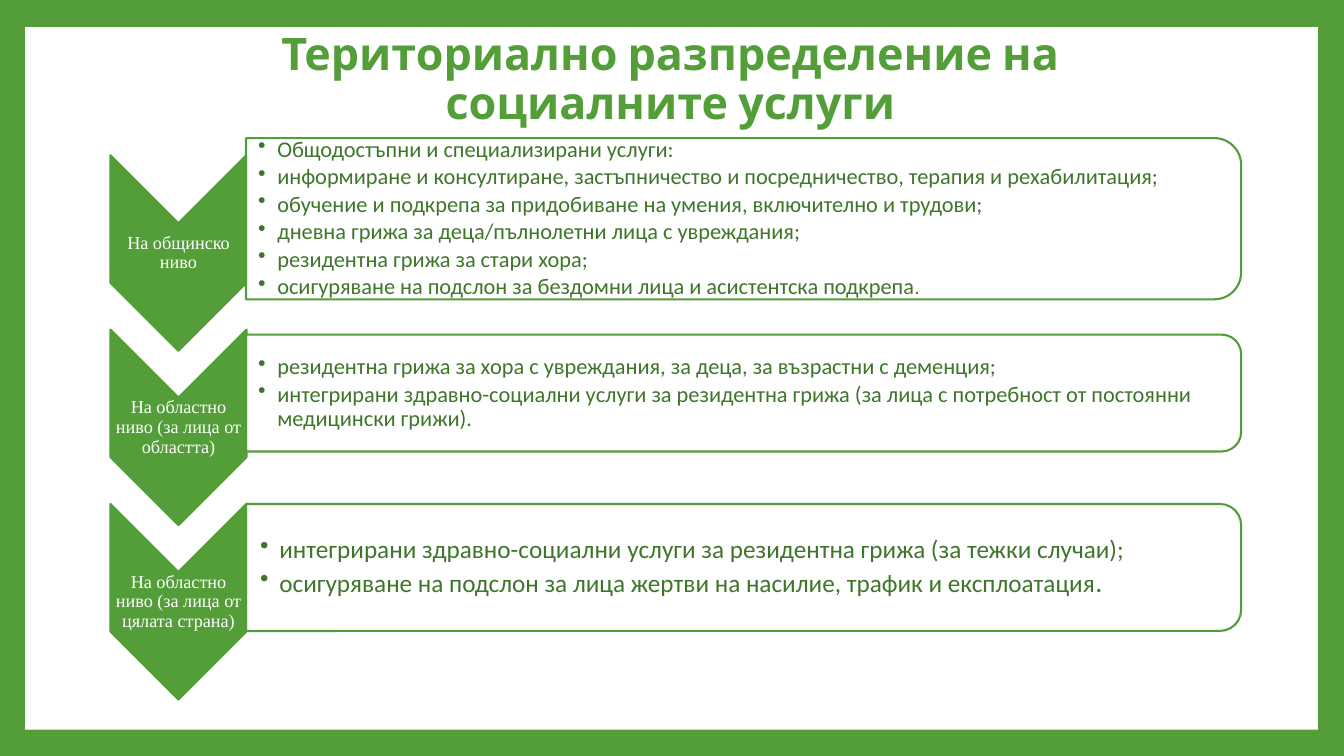
from dataclasses import dataclass

from lxml.etree import SubElement
from pptx import Presentation
from pptx.dml.color import RGBColor
from pptx.enum.shapes import MSO_SHAPE
from pptx.enum.text import MSO_ANCHOR, MSO_AUTO_SIZE, PP_ALIGN
from pptx.oxml.ns import qn
from pptx.util import Inches, Pt


@dataclass(frozen=True)
class Theme:
    green: RGBColor = RGBColor(0x54, 0x9E, 0x39)
    dark_green: RGBColor = RGBColor(0x3F, 0x76, 0x2B)
    white: RGBColor = RGBColor(0xFF, 0xFF, 0xFF)
    title_font: str = "Cabin"
    label_font: str = "Times New Roman"
    list_font: str = "Calibri"
    title_size: int = 32
    label_size: int = 13
    line_width: float = 1.5


@dataclass(frozen=True)
class Level:
    label: str
    services: tuple
    panel_height: float
    size: int
    stop_size: int  # type size of the closing full stop
    indent: float = 0.12


THEME = Theme()
FIRST_CENTER, LEVEL_STEP = 2.51, 1.73
CHEVRON_CENTER, CHEVRON_WIDTH, CHEVRON_LENGTH = 1.77, 1.35, 1.94
PANEL_LEFT, PANEL_WIDTH, PANEL_RISE = 2.44, 9.87, 0.34
SMALL_INSET = 0.01
BULLET_INDENT = 0.19

LEVELS = (
    Level("На общинско ниво", (
        "Общодостъпни и специализирани услуги:",
        "информиране и консултиране, застъпничество и посредничество, терапия и рехабилитация;",
        "обучение и подкрепа за придобиване на умения, включително и трудови;",
        "дневна грижа за деца/пълнолетни лица с увреждания;",
        "резидентна грижа за стари хора;",
        "осигуряване на подслон за бездомни лица и асистентска подкрепа.",
    ), 1.6, 16, 14),
    Level("На областно ниво (за лица от областта)", (
        "резидентна грижа за хора с увреждания, за деца, за възрастни с деменция;",
        "интегрирани здравно-социални услуги за резидентна грижа "
        "(за лица с потребност от постоянни медицински грижи).",
    ), 1.16, 16, 16),
    Level("На областно ниво (за лица от цялата страна)", (
        "интегрирани здравно-социални услуги за резидентна грижа (за тежки случаи);",
        "осигуряване на подслон за лица жертви на насилие, трафик и експлоатация.",
    ), 1.26, 18, 20, 0.14),
)


def style_font(font, name, size, color, bold=False):
    font.name, font.size, font.bold = name, Pt(size), bold
    font.color.rgb = color


def add_frame(page):
    """Green page edge around a white field, behind the title."""
    page.background.fill.solid()
    page.background.fill.fore_color.rgb = THEME.green
    frame = page.shapes.add_shape(
        MSO_SHAPE.RECTANGLE, Inches(0.25), Inches(0.27), Inches(12.82), Inches(6.97))
    frame.shadow.inherit = False
    frame.fill.solid()
    frame.fill.fore_color.rgb = THEME.white
    frame.line.fill.background()
    page.shapes.title.element.addprevious(frame.element)


def set_title(page, text):
    title = page.shapes.title
    title.left, title.top = Inches(1.25), Inches(0.45)
    title.width, title.height = Inches(10.8), Inches(0.7)
    frame = title.text_frame
    frame.text = text
    frame.word_wrap = True
    frame.auto_size = MSO_AUTO_SIZE.NONE
    frame.vertical_anchor = MSO_ANCHOR.MIDDLE
    frame.margin_left = frame.margin_right = Inches(0.5)
    para = frame.paragraphs[0]
    para.alignment = PP_ALIGN.CENTER
    para.line_spacing = 0.9
    style_font(para.font, THEME.title_font, THEME.title_size, THEME.green, True)


def add_turned_shape(page, kind, center_x, center_y, width, height, color):
    """Add a shape turned a quarter right; width and height are as seen."""
    shape = page.shapes.add_shape(
        kind, Inches(center_x - height / 2), Inches(center_y - width / 2),
        Inches(height), Inches(width))
    shape.rotation = 90
    shape.shadow.inherit = False
    shape.fill.solid()
    shape.fill.fore_color.rgb = color
    shape.line.color.rgb = THEME.green
    shape.line.width = Pt(THEME.line_width)
    return shape


def add_text_frame(page, left, center_y, width, height, indent=SMALL_INSET):
    box = page.shapes.add_textbox(
        Inches(left), Inches(center_y - height / 2), Inches(width), Inches(height))
    frame = box.text_frame
    frame.word_wrap = True
    frame.vertical_anchor = MSO_ANCHOR.MIDDLE
    frame.margin_left = Inches(indent)
    frame.margin_right = frame.margin_top = frame.margin_bottom = Inches(SMALL_INSET)
    return frame


def add_label(page, text, center_y):
    add_turned_shape(page, MSO_SHAPE.CHEVRON, CHEVRON_CENTER, center_y,
                     CHEVRON_WIDTH, CHEVRON_LENGTH, THEME.green)
    frame = add_text_frame(
        page, CHEVRON_CENTER - CHEVRON_WIDTH / 2, center_y, CHEVRON_WIDTH, 0.58)
    frame.text = text
    para = frame.paragraphs[0]
    para.alignment = PP_ALIGN.CENTER
    para.line_spacing = 0.9
    style_font(para.font, THEME.label_font, THEME.label_size, THEME.white)


def add_bullet(para):
    properties = para._p.get_or_add_pPr()
    properties.set("marL", str(Inches(BULLET_INDENT)))
    properties.set("indent", str(-Inches(BULLET_INDENT)))
    SubElement(properties, qn("a:buChar")).set("char", "•")


def add_services(page, level, center_y):
    panel = add_turned_shape(
        page, MSO_SHAPE.ROUND_2_SAME_RECTANGLE, PANEL_LEFT + PANEL_WIDTH / 2,
        center_y, PANEL_WIDTH, level.panel_height, THEME.white)
    fill_color = panel.element.spPr.find(qn("a:solidFill")).find(qn("a:srgbClr"))
    SubElement(fill_color, qn("a:alpha")).set("val", "90000")

    frame = add_text_frame(page, PANEL_LEFT, center_y, PANEL_WIDTH - 0.06,
                           level.panel_height - 0.12, level.indent)
    for index, service in enumerate(level.services):
        para = frame.add_paragraph() if index else frame.paragraphs[0]
        para.line_spacing = 0.9
        para.space_after = Pt(level.size * 0.15)
        add_bullet(para)
        style_font(para.font, THEME.list_font, level.size, THEME.dark_green)
        if service.endswith(".") and level.stop_size != level.size:
            para.add_run().text = service[:-1]
            stop = para.add_run()
            stop.text = "."
            stop.font.size = Pt(level.stop_size)
        else:
            para.add_run().text = service


def main():
    deck = Presentation()
    deck.slide_width, deck.slide_height = Inches(13.33), Inches(7.5)
    page = deck.slides.add_slide(deck.slide_layouts.get_by_name("Title Only"))
    add_frame(page)
    set_title(page, "Териториално разпределение на социалните услуги")
    for index, level in enumerate(LEVELS):
        center_y = FIRST_CENTER + index * LEVEL_STEP
        add_label(page, level.label, center_y)
        add_services(page, level, center_y - PANEL_RISE)
    deck.save("out.pptx")


if __name__ == "__main__":
    main()
